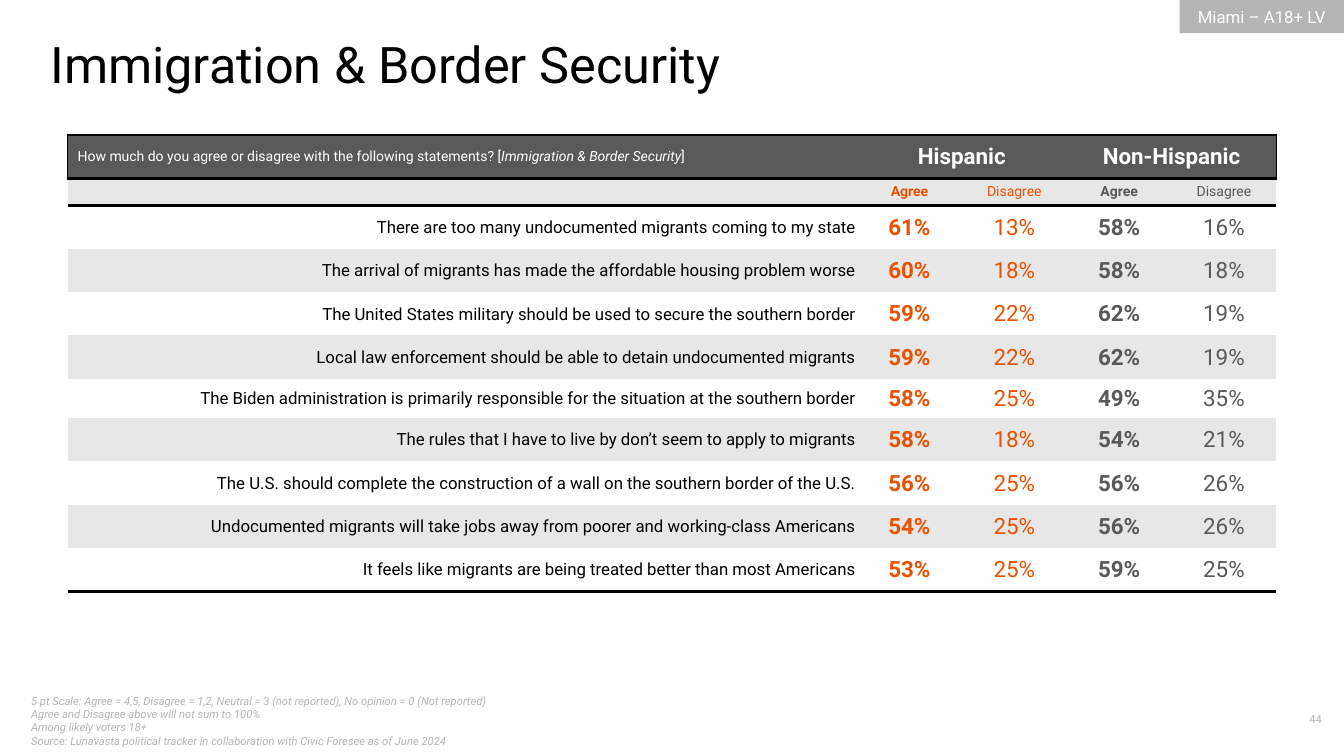
from dataclasses import dataclass

from lxml.etree import SubElement
from pptx import Presentation
from pptx.dml.color import RGBColor
from pptx.enum.shapes import MSO_SHAPE as Preset
from pptx.enum.text import MSO_ANCHOR as Anchor, PP_ALIGN as Align
from pptx.oxml.ns import qn
from pptx.util import Inches, Pt


@dataclass(frozen=True)
class Theme:
    font: str = "Roboto"
    black: str = "000000"
    white: str = "FFFFFF"
    header: str = "595959"
    band: str = "E7E7E7"
    muted: str = "B5B5B5"
    hispanic: str = "EA5101"
    non_hispanic: str = "595959"
    title_size: int = 36
    value_size: int = 16
    statement_size: int = 12
    label_size: int = 10
    note_size: int = 8
    plain_table: str = "{2D5ABB26-0587-4C30-8999-92F81FD0307C}"


NOTES = [
    "5 pt Scale: Agree = 4,5, Disagree = 1,2, Neutral = 3 (not reported), No opinion = 0 (Not reported)",
    "Agree and Disagree above will not sum to 100%",
    "Among likely voters 18+\vSource: Lunavasta political tracker in collaboration with Civic Foresee as of June 2024",
]
RESULTS = [
    ("There are too many undocumented migrants coming to my state", 61, 13, 58, 16),
    ("The arrival of migrants has made the affordable housing problem worse", 60, 18, 58, 18),
    ("The United States military should be used to secure the southern border", 59, 22, 62, 19),
    ("Local law enforcement should be able to detain undocumented migrants", 59, 22, 62, 19),
    ("The Biden administration is primarily responsible for the situation at the southern border", 58, 25, 49, 35),
    ("The rules that I have to live by don’t seem to apply to migrants", 58, 18, 54, 21),
    ("The U.S. should complete the construction of a wall on the southern border of the U.S.", 56, 25, 56, 26),
    ("Undocumented migrants will take jobs away from poorer and working-class Americans", 54, 25, 56, 26),
    ("It feels like migrants are being treated better than most Americans", 53, 25, 59, 25),
]


def write(paragraph, text, *, font, size, color, bold=False, italic=False, align=Align.LEFT):
    paragraph.alignment = align
    for index, line in enumerate(text.split("\v")):
        if index:
            paragraph.add_line_break()
        run = paragraph.add_run()
        run.text = line
        run.font.name = font
        run.font.size = Pt(size)
        run.font.color.rgb = RGBColor.from_string(color)
        run.font.bold = bold
        run.font.italic = italic


class SlideBuilder:
    def __init__(self, slide, theme):
        self.slide = slide
        self.theme = theme

    def text(self, bounds, lines, anchor=Anchor.TOP, inset=None, **style):
        frame = self.slide.shapes.add_textbox(*map(Inches, bounds)).text_frame
        frame.word_wrap = True
        frame.vertical_anchor = anchor
        if inset is not None:
            frame.margin_left = frame.margin_right = Inches(inset)
            frame.margin_top = frame.margin_bottom = Inches(inset)
        for index, line in enumerate(lines):
            paragraph = frame.add_paragraph() if index else frame.paragraphs[0]
            write(paragraph, line, font=self.theme.font, **style)

    def tag(self, bounds, label, fill, **style):
        tag = self.slide.shapes.add_shape(Preset.RECTANGLE, *map(Inches, bounds))
        tag.shadow.inherit = False
        tag.fill.solid()
        tag.fill.fore_color.rgb = RGBColor.from_string(fill)
        tag.line.fill.background()
        tag.text_frame.vertical_anchor = Anchor.MIDDLE
        write(tag.text_frame.paragraphs[0], label, font=self.theme.font, align=Align.CENTER, **style)

    def table(self, left, top, widths, heights):
        bounds = left, top, sum(widths), sum(heights)
        table = self.slide.shapes.add_table(len(heights), len(widths), *map(Inches, bounds)).table
        table.first_row = table.horz_banding = False
        table._tbl.tblPr.find(qn("a:tableStyleId")).text = self.theme.plain_table
        for column, width in zip(table.columns, widths):
            column.width = Inches(width)
        for row, height in zip(table.rows, heights):
            row.height = Inches(height)
        return table

    def cell(self, cell, runs, fill=None, borders=None, tight=False, **style):
        cell.vertical_anchor = Anchor.MIDDLE
        if tight:
            cell.margin_left = cell.margin_right = cell.margin_top = Inches(0.01)
            cell.margin_bottom = 0
        properties = cell._tc.get_or_add_tcPr()
        for side in "LRTB":
            if side in (borders or {}):
                line = SubElement(properties, qn(f"a:ln{side}"), w=str(Pt(borders[side])))
                color = SubElement(SubElement(line, qn("a:solidFill")), qn("a:srgbClr"))
                color.set("val", self.theme.black)
        if fill:
            cell.fill.solid()
            cell.fill.fore_color.rgb = RGBColor.from_string(fill)
        else:
            cell.fill.background()
        paragraph = cell.text_frame.paragraphs[0]
        for index, text in enumerate(runs):
            write(paragraph, text, font=self.theme.font, italic=index % 2 == 1, **style)
        if not runs:
            SubElement(paragraph._p, qn("a:endParaRPr"), sz=str(style["size"] * 100))


def add_results(builder):
    theme = builder.theme
    heights = [0.43, 0.26] + [0.43] * 4 + [0.39] + [0.43] * 4
    table = builder.table(0.67, 1.34, [7.83] + [1.04] * 4, heights)
    rule = 2.25
    groups = [("Hispanic", theme.hispanic), ("Non-Hispanic", theme.non_hispanic)]

    question = ["How much do you agree or disagree with the following statements? [",
                "Immigration & Border Security", "]"]
    edges = {"T": rule, "B": rule}
    builder.cell(table.cell(0, 0), question, theme.header, {**edges, "L": 1},
                 size=theme.label_size, color=theme.white)
    builder.cell(table.cell(1, 0), [], theme.band, {"T": rule}, size=theme.label_size)

    for group, (name, color) in enumerate(groups):
        first = 1 + 2 * group
        table.cell(0, first).merge(table.cell(0, first + 1))
        for column in (first, first + 1):
            group_edges = {**edges, "R": 1} if column == 4 or first == 3 else edges
            builder.cell(table.cell(0, column), [name] if column == first else [],
                         theme.header, group_edges, size=theme.value_size,
                         color=theme.white, bold=True, align=Align.CENTER)
        for offset, answer in enumerate(("Agree", "Disagree")):
            column = first + offset
            style = dict(color=color, bold=offset == 0, align=Align.CENTER)
            builder.cell(table.cell(1, column), [answer], theme.band, {"T": rule},
                         size=theme.label_size, **style)
            for row, result in enumerate(RESULTS, start=2):
                builder.cell(table.cell(row, column), [f"{result[column]}%"],
                             size=theme.value_size, tight=True, **row_look(row, theme, rule), **style)

    for row, (statement, *_) in enumerate(RESULTS, start=2):
        builder.cell(table.cell(row, 0), [statement], size=theme.statement_size,
                     color=theme.black, align=Align.RIGHT, tight=True, **row_look(row, theme, rule))


def row_look(row, theme, rule):
    if row == len(RESULTS) + 1:
        return dict(fill=None, borders={"B": rule})
    return dict(fill=theme.band if row % 2 else theme.white)


def main():
    deck = Presentation()
    deck.slide_width, deck.slide_height = Inches(13.33), Inches(7.5)
    theme = Theme()
    builder = SlideBuilder(deck.slides.add_slide(deck.slide_layouts[6]), theme)
    note = dict(size=theme.note_size, color=theme.muted)
    builder.text((0.21, 6.95, 5.11, 0.4), NOTES, Anchor.MIDDLE, italic=True, **note)
    builder.text((12.33, 7.02, 0.88, 0.27), ["44"], align=Align.RIGHT, **note)
    builder.tag((11.7, 0, 1.63, 0.33), "Miami – A18+ LV", theme.muted,
                size=theme.statement_size, color=theme.white)
    builder.text((0.5, 0.33, 12, 0.61), ["Immigration & Border Security"], inset=0,
                 size=theme.title_size, color=theme.black)
    add_results(builder)
    deck.save("out.pptx")


if __name__ == "__main__":
    main()
